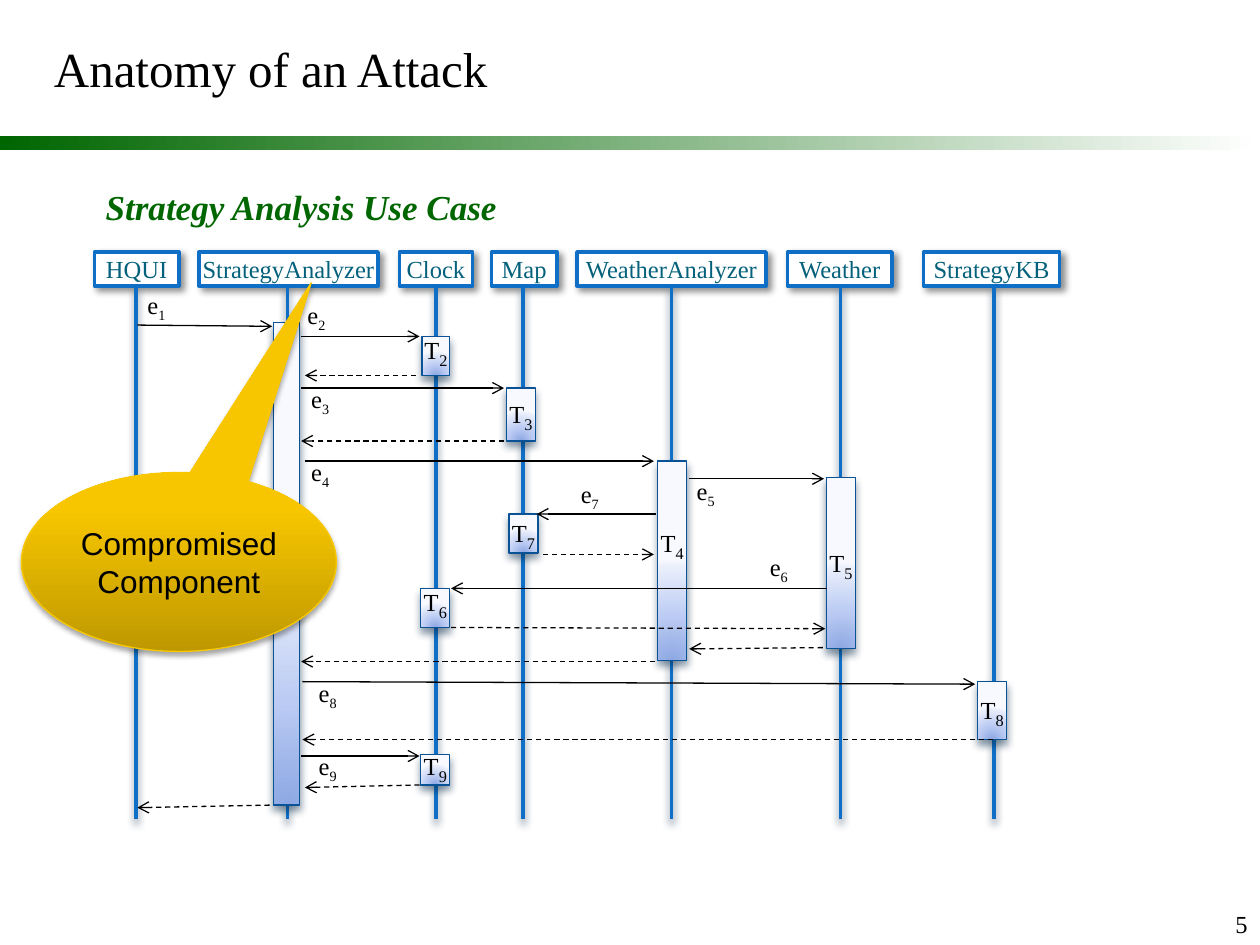
from pptx import Presentation
from pptx.dml.color import RGBColor
from pptx.enum.dml import MSO_LINE as Dash
from pptx.enum.shapes import MSO_CONNECTOR as Link, MSO_SHAPE as Kind
from pptx.enum.text import MSO_ANCHOR as Anchor, PP_ALIGN as Align
from pptx.oxml import parse_xml
from pptx.oxml.ns import nsdecls, qn
from pptx.util import Cm, Pt

SERIF = "Times New Roman"
TOP, BOX, END = 2, 0.27, 6.5
BLUE, BLACK, GREEN = "0F6FC6", "000000", "006600"
MID, LOW, HIGH = Anchor.MIDDLE, Anchor.BOTTOM, Anchor.TOP

LANES = [
    ("HQUI", 0.75, 0.67, 1.08), ("StrategyAnalyzer", 1.58, 1.42, 2.28),
    ("Clock", 3.17, 0.58, 3.46), ("Map", 3.9, 0.52, 4.15),
    ("WeatherAnalyzer", 4.58, 1.5, 5.33), ("Weather", 6.25, 0.83, 6.67),
    ("StrategyKB", 7.33, 1.08, 7.89),
]
BARS = [
    ("", 2.17, 2.56, 0.21, 3.83, MID, 0.05, 0.05),
    ("2", 3.35, 2.67, 0.22, 0.31, LOW, 0.05, 0.05),
    ("3", 4.02, 3.08, 0.23, 0.42, MID, 0.05, 0.05),
    ("4", 5.22, 3.66, 0.23, 1.58, MID, 0.05, 0.32),
    ("5", 6.56, 3.79, 0.23, 1.36, MID, 0.05, 0.05),
    ("6", 3.34, 4.67, 0.23, 0.31, LOW, 0.05, 0.05),
    ("7", 4.04, 4.08, 0.23, 0.31, MID, 0.05, 0.05),
    ("8", 7.76, 5.41, 0.23, 0.46, MID, 0.05, 0.05),
    ("9", 3.34, 5.99, 0.23, 0.24, MID, 0, 0.05),
]
CALLS = [
    (1.09, 2.58, 2.16, 2.59), (2.39, 2.67, 3.33, 2.67),
    (2.39, 3.08, 4, 3.08), (2.42, 3.66, 5.19, 3.66),
    (5.47, 3.8, 6.54, 3.8), (5.21, 4.08, 4.26, 4.08),
    (6.56, 4.67, 3.58, 4.67), (2.4, 5.41, 7.74, 5.43),
    (2.39, 6, 3.33, 6),
]
REPLIES = [
    (3.3, 2.98, 2.42, 2.98), (4, 3.5, 2.39, 3.5),
    (4.31, 4.4, 5.19, 4.4), (3.58, 4.98, 6.55, 4.99),
    (6.53, 5.14, 5.47, 5.15), (5.2, 5.25, 2.39, 5.25),
    (7.88, 5.87, 2.4, 5.87), (3.33, 6.23, 2.42, 6.25),
    (2.14, 6.39, 1.09, 6.41),
]
EVENTS = [
    ("1", 1.17, 2.25), ("2", 2.44, 2.33), ("3", 2.47, 3),
    ("4", 2.47, 3.58), ("5", 5.53, 3.73), ("6", 6.11, 4.33),
    ("7", 4.61, 3.75), ("8", 2.53, 5.33), ("9", 2.53, 5.91),
]
FADE = [(0, GREEN), (100, "FFFFFF")]
SKY = [(0, "8DA8E3"), (43, "BBCBF3"), (93, "EAEFFB"), (100, "F7F9FF")]
GOLD = [(0, "BE9800"), (80, "F7C600"), (100, "F8C700")]
GLOW = '<a:path path="circle"><a:fillToRect l="50000" t="130000" r="50000" b="-30000"/></a:path>'
CORNER = (BLACK, 43, 4, 3, 45)
UNDER = ("042747", 48, 4.5, 3, 90)
SOFT = (BLACK, 35, 3.1, 1.8, 90)


def inch(*nums):
    return [Cm(n * 2.54) for n in nums]


def rgb(code):
    return RGBColor.from_string(code)


def slant(deg):
    return f'<a:lin ang="{deg * 60000}" scaled="0"/>'


def blend(shape, stops, way):
    shape.fill.background()
    marks = "".join(
        f'<a:gs pos="{p * 1000}"><a:srgbClr val="{c}"/></a:gs>' for p, c in stops)
    props = shape.element.spPr
    props.replace(props.find(qn("a:noFill")), parse_xml(
        f'<a:gradFill {nsdecls("a")} rotWithShape="1">'
        f'<a:gsLst>{marks}</a:gsLst>{way}</a:gradFill>'))


def shade(item, look=None):
    inner = ""
    if look:
        code, alpha, blur, dist, deg = look
        inner = (f'<a:outerShdw blurRad="{Pt(blur)}" dist="{Pt(dist)}" dir="{deg * 60000}" '
                 f'rotWithShape="0"><a:srgbClr val="{code}">'
                 f'<a:alpha val="{alpha * 1000}"/></a:srgbClr></a:outerShdw>')
    item.element.spPr.append(
        parse_xml(f'<a:effectLst {nsdecls("a")}>{inner}</a:effectLst>'))


def ink(item, code, width):
    item.line.color.rgb = rgb(code)
    item.line.width = Pt(width)


def write(shape, text, size, code=BLACK, font=SERIF, sub="", low=None,
          align=Align.CENTER, anchor=MID, pad=(0, 0.05, 0, 0.05), wrap=True,
          bold=False, slope=False):
    frame = shape.text_frame
    frame.word_wrap = wrap
    frame.vertical_anchor = anchor
    (frame.margin_left, frame.margin_top,
     frame.margin_right, frame.margin_bottom) = inch(*pad)
    para = frame.paragraphs[0]
    para.text = text
    para.alignment = align
    if sub:
        para.add_run().text = sub
    for run in para.runs:
        face = run.font
        face.name, face.size = font, Pt(size)
        face.bold, face.italic = bold, slope
        face.color.rgb = rgb(code)
    if sub:
        face.size = Pt(low or size)
        face._element.set("baseline", "-25000")


def draw(slide, kind, *spot):
    return slide.shapes.add_shape(kind, *inch(*spot))


def note(slide, spot, text, size, **look):
    write(slide.shapes.add_textbox(*inch(*spot)), text, size, **look)


def join(slide, ends, code, width, look=None):
    line = slide.shapes.add_connector(Link.STRAIGHT, *inch(*ends))
    ink(line, code, width)
    shade(line, look)
    return line


def arrow(slide, ends, dash=None):
    line = join(slide, ends, BLACK, 0.75)
    if dash:
        line.line.dash_style = dash
    line.element.spPr.find(qn("a:ln")).append(
        parse_xml(f'<a:tailEnd {nsdecls("a")} type="arrow"/>'))


def main():
    deck = Presentation()
    deck.slide_width, deck.slide_height = inch(10, 7.5)
    slide = deck.slides.add_slide(deck.slide_layouts[6])
    edge = (0.1, 0.05, 0.1, 0.05)

    band = draw(slide, Kind.RECTANGLE, 0, 1.08, 10, 0.11)
    blend(band, FADE, slant(0))
    band.line.fill.background()
    shade(band)
    note(slide, (0.33, 0, 9.42, 1.08), "Anatomy of an Attack", 28,
         align=Align.LEFT, pad=edge)
    note(slide, (0.74, 1.42, 3.35, 0.44), "Strategy Analysis Use Case", 20,
         code=GREEN, align=Align.LEFT, anchor=HIGH, pad=edge, wrap=False,
         bold=True, slope=True)

    for name, left, width, mid in LANES:
        head = draw(slide, Kind.RECTANGLE, left, TOP, width, BOX)
        head.fill.solid()
        head.fill.fore_color.rgb = rgb("FFFFFF")
        ink(head, BLUE, 2)
        shade(head, CORNER)
        write(head, name, 14, "04617B", pad=(0, 0, 0, 0))
        join(slide, (mid, TOP + BOX, mid, END), BLUE, 2, UNDER)

    for tag, left, top, width, tall, anchor, above, below in BARS:
        bar = draw(slide, Kind.RECTANGLE, left, top, width, tall)
        blend(bar, SKY, GLOW)
        ink(bar, "095295", 0.75)
        shade(bar, UNDER)
        if tag:
            write(bar, "T", 14, sub=tag, low=16, anchor=anchor,
                  pad=(0, above, 0, below))

    for ends in CALLS:
        arrow(slide, ends)
    for ends in REPLIES:
        arrow(slide, ends, Dash.DASH)
    for tag, left, top in EVENTS:
        note(slide, (left, top, 0.24, 0.34), "e", 14, sub=tag,
             align=Align.LEFT, anchor=HIGH)

    alert = draw(slide, Kind.OVAL_CALLOUT, 0.17, 3.75, 2.5, 1.42)
    alert.adjustments[0], alert.adjustments[1] = 0.42, -1.56
    blend(alert, GOLD, slant(270))
    ink(alert, "F9C800", 0.75)
    shade(alert, SOFT)
    write(alert, "Compromised Component", 18, font="Arial")

    note(slide, (9.16, 7, 0.84, 0.5), "5", 14, align=Align.RIGHT,
         anchor=LOW, pad=edge)
    deck.save("out.pptx")


if __name__ == "__main__":
    main()
